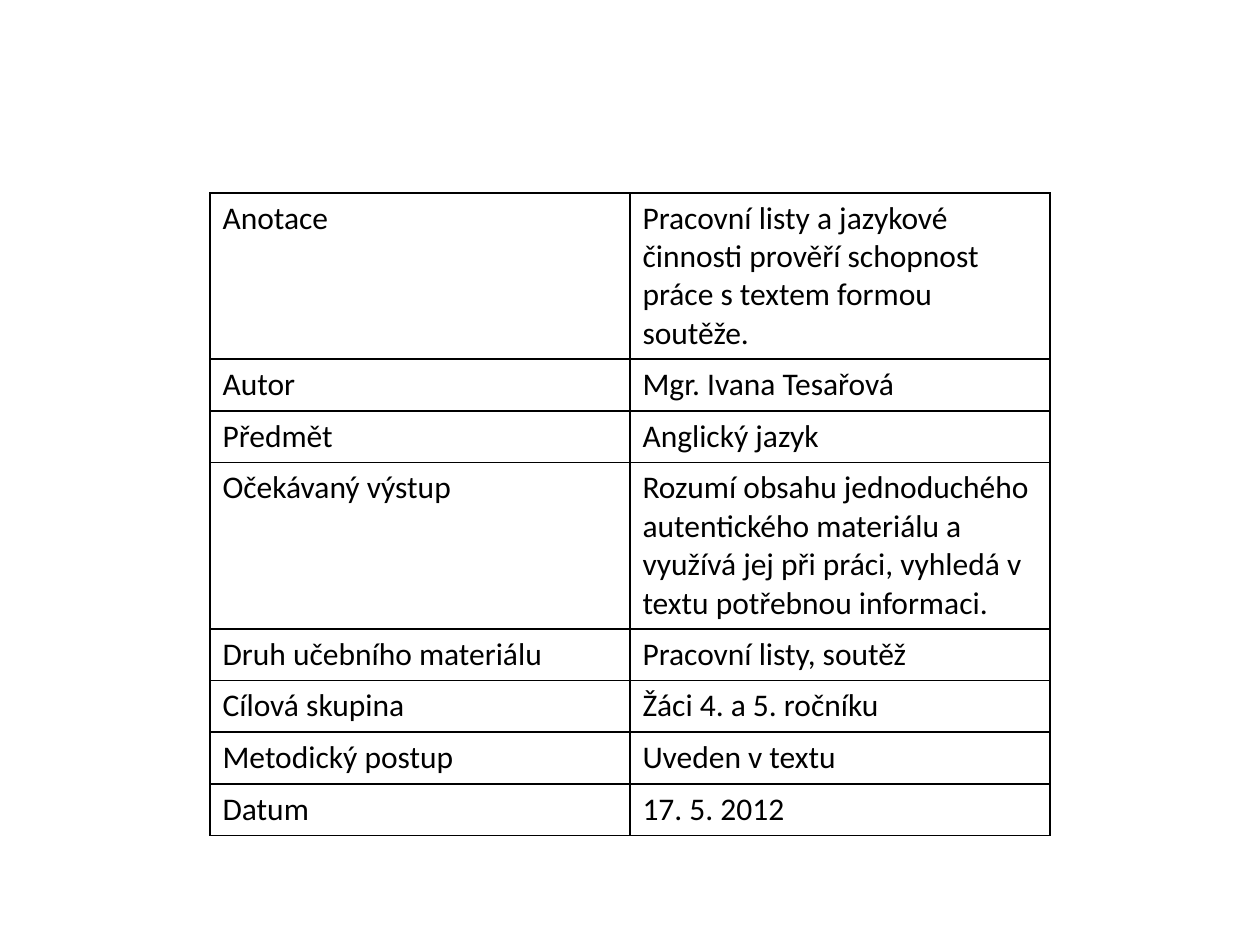
from lxml.etree import SubElement
from pptx import Presentation
from pptx.dml.color import RGBColor
from pptx.oxml.ns import qn
from pptx.util import Inches, Pt

BLACK = RGBColor(0, 0, 0)
WHITE = RGBColor(255, 255, 255)

ROWS = [
    ("Anotace", "Pracovní listy a jazykové činnosti prověří schopnost práce s textem formou soutěže."),
    ("Autor", "Mgr. Ivana Tesařová"),
    ("Předmět", "Anglický jazyk"),
    ("Očekávaný výstup", "Rozumí obsahu jednoduchého autentického materiálu a využívá jej při práci, "
                         "vyhledá v textu potřebnou informaci."),
    ("Druh učebního materiálu", "Pracovní listy, soutěž"),
    ("Cílová skupina", "Žáci 4. a 5. ročníku"),
    ("Metodický postup", "Uveden v textu"),
    ("Datum", "17. 5. 2012"),
]


def write(tf, text, size=18, font="Calibri", color=BLACK):
    tf.word_wrap = True
    r = tf.paragraphs[0].add_run()
    r.text = text
    r.font.size = Pt(size)
    r.font.name = font
    r.font.bold = False
    r.font.color.rgb = color


class Sheet:
    line_color = BLACK
    line_width = 1
    row_height = Inches(0.41)

    def __init__(self, prs):
        self.width, self.height = prs.slide_width, prs.slide_height
        self.s = prs.slides.add_slide(prs.slide_layouts[6])

    def background(self, color):
        fill = self.s.background.fill
        fill.solid()
        fill.fore_color.rgb = color

    def borders(self, cell):
        tc_pr = cell._tc.get_or_add_tcPr()
        for side in ("lnL", "lnR", "lnT", "lnB"):
            ln = SubElement(tc_pr, qn(f"a:{side}"), w=str(Pt(self.line_width)))
            fill = SubElement(ln, qn("a:solidFill"))
            SubElement(fill, qn("a:srgbClr"), val=str(self.line_color))

    def table(self, rows, left, top, width):
        sp = self.s.shapes.add_table(
            len(rows), len(rows[0]),
            int(left * self.width), int(top * self.height),
            int(width * self.width), self.row_height * len(rows))
        table = sp.table
        table.first_row = table.horz_banding = False
        for row, texts in zip(table.rows, rows):
            row.height = self.row_height
            for cell, text in zip(row.cells, texts):
                self.borders(cell)
                cell.fill.background()
                write(cell.text_frame, text)


def main():
    prs = Presentation()
    prs.slide_width, prs.slide_height = Inches(10), Inches(7.5)
    sheet = Sheet(prs)
    sheet.background(WHITE)
    sheet.table(ROWS, left=1 / 6, top=0.204, width=2 / 3)
    prs.save("out.pptx")


if __name__ == "__main__":
    main()
